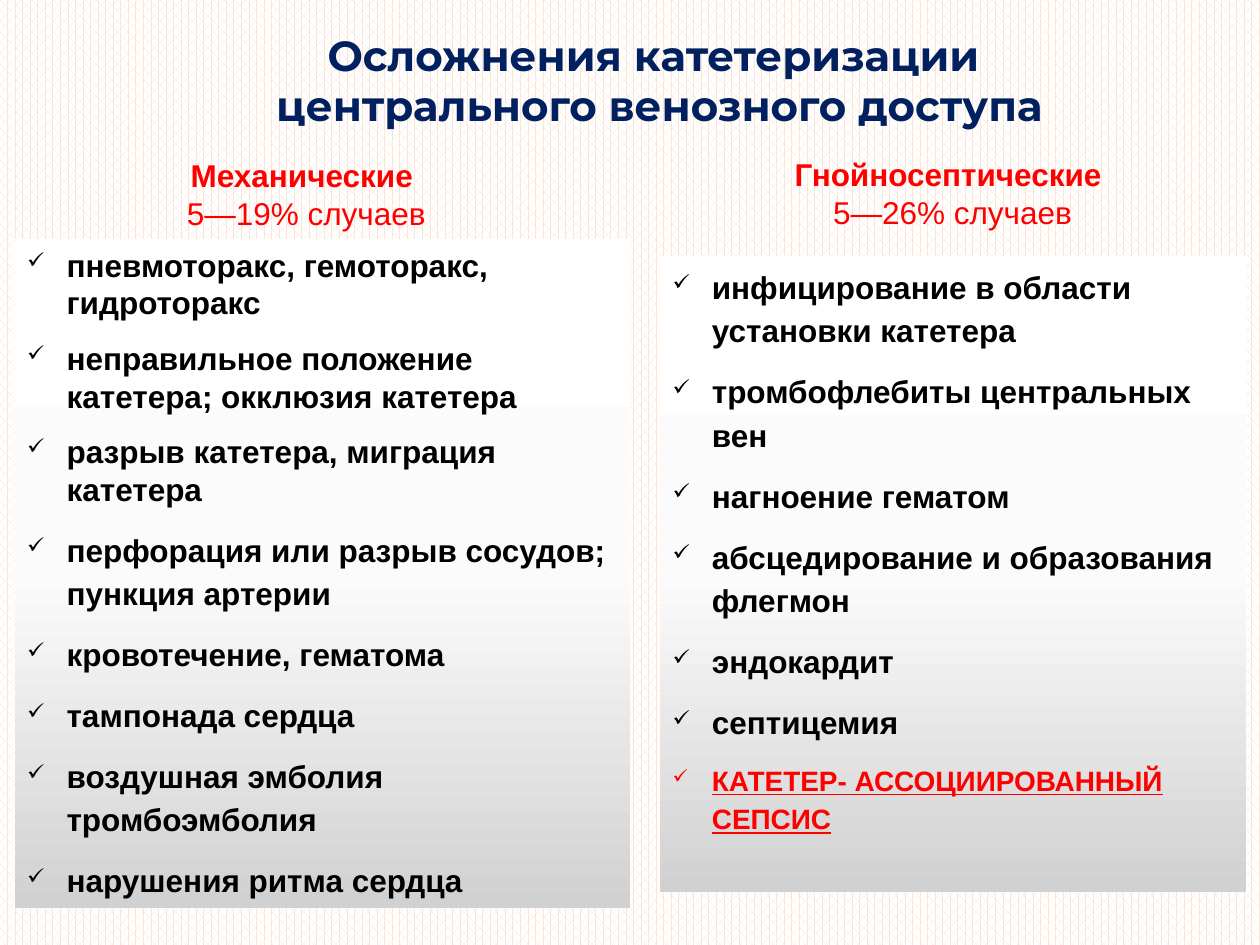
"""Build a slide that compares two groups of central venous catheter complications."""
from dataclasses import dataclass

from lxml.etree import SubElement
from pptx import Presentation
from pptx.dml.color import RGBColor
from pptx.enum.dml import MSO_PATTERN
from pptx.enum.shapes import MSO_SHAPE
from pptx.enum.text import MSO_ANCHOR, MSO_AUTO_SIZE, PP_ALIGN
from pptx.oxml.ns import qn
from pptx.util import Pt


@dataclass(frozen=True)
class Theme:
    navy: str = "002060"
    red: str = "FF0000"
    black: str = "000000"
    white: str = "FFFFFF"
    peach: str = "FBE5D6"
    panel_stops: tuple = ((0, "FFFFFF"), (50, "FBFBFB"), (100, "D1D1D1"))
    title_font: str = "Montserrat"
    body_font: str = "Arial"
    title_size: float = 24
    body_size: float = 18
    accent_size: float = 16
    indent: float = 22.5
    loose: float = 1.15


THEME = Theme()


@dataclass(frozen=True)
class Area:
    left: float
    top: float
    width: float
    height: float

    def lengths(self) -> tuple:
        return tuple(Pt(value) for value in (self.left, self.top, self.width, self.height))


@dataclass(frozen=True)
class Line:
    text: str
    color: str = THEME.black
    size: float = THEME.body_size
    font: str = THEME.body_font
    bold: bool = True
    underline: bool = False
    spacing: float = 1.0


@dataclass(frozen=True)
class Group:
    heading: tuple
    heading_area: Area
    heading_wraps: bool
    items: tuple
    panel_area: Area


def heading(name: str, share: str) -> tuple:
    return Line(name, THEME.red), Line(share, THEME.red, bold=False)


def loose_items(*texts: str) -> tuple:
    return tuple(Line(text, spacing=THEME.loose) for text in texts)


TITLE = tuple(
    Line(text, THEME.navy, THEME.title_size, THEME.title_font)
    for text in ("Осложнения катетеризации ", "центрального венозного доступа")
)
TITLE_AREA = Area(48, 13, 657.5, 65.5)

MECHANICAL = Group(
    heading("Механические ", "5—19% случаев"),
    Area(29.5, 85.5, 291, 51),
    True,
    (
        Line("пневмоторакс, гемоторакс, гидроторакс"),
        Line("неправильное положение катетера; окклюзия катетера"),
        Line("разрыв катетера, миграция катетера"),
    )
    + loose_items(
        "перфорация или разрыв сосудов; пункция артерии",
        "кровотечение, гематома",
        "тампонада сердца",
        "воздушная эмболия тромбоэмболия",
        "нарушения ритма сердца",
    ),
    Area(8.5, 136.8, 351.5, 382.3),
)

SEPTIC = Group(
    heading("Гнойносептические ", "5—26% случаев"),
    Area(445.7, 85, 197.3, 51),
    False,
    loose_items(
        "инфицирование в области установки катетера",
        "тромбофлебиты центральных вен",
        "нагноение гематом",
        "абсцедирование и образования флегмон",
        "эндокардит",
        "септицемия",
    )
    + (
        Line(
            "КАТЕТЕР- АССОЦИИРОВАННЫЙ СЕПСИС",
            THEME.red,
            THEME.accent_size,
            underline=True,
            spacing=THEME.loose,
        ),
    ),
    Area(377.2, 146.2, 334.8, 363.6),
)


def add_check_mark(paragraph) -> None:
    properties = paragraph._p.get_or_add_pPr()
    properties.set("marL", str(Pt(THEME.indent)))
    properties.set("indent", str(-Pt(THEME.indent)))
    SubElement(properties, qn("a:buSzPct"), val="70000")
    SubElement(properties, qn("a:buChar"), char="✓")


def write_lines(shape, lines: tuple, checked: bool = False, wraps: bool = True) -> None:
    frame = shape.text_frame
    frame.word_wrap = wraps
    frame.auto_size = MSO_AUTO_SIZE.SHAPE_TO_FIT_TEXT
    frame.vertical_anchor = MSO_ANCHOR.TOP
    for index, line in enumerate(lines):
        paragraph = frame.add_paragraph() if index else frame.paragraphs[0]
        paragraph.text = line.text
        paragraph.alignment = PP_ALIGN.LEFT if checked else PP_ALIGN.CENTER
        paragraph.line_spacing = line.spacing
        paragraph.space_before = Pt(0)
        paragraph.space_after = Pt(10 if checked else 0)
        if checked:
            add_check_mark(paragraph)
        font = paragraph.font
        font.name = line.font
        font.size = Pt(line.size)
        font.bold = line.bold
        font.underline = line.underline
        font.color.rgb = RGBColor.from_string(line.color)


def fill_panel(panel) -> None:
    panel.fill.gradient()
    gradient = panel._element.spPr.find(qn("a:gradFill"))
    stops = gradient.find(qn("a:gsLst"))
    for stop in list(stops):
        stops.remove(stop)
    for position, color in THEME.panel_stops:
        stop = SubElement(stops, qn("a:gs"), pos=str(position * 1000))
        SubElement(stop, qn("a:srgbClr"), val=color)
    gradient.find(qn("a:lin")).set("ang", "5400000")


def draw_group(page, group: Group) -> None:
    box = page.shapes.add_textbox(*group.heading_area.lengths())
    write_lines(box, group.heading, wraps=group.heading_wraps)
    panel = page.shapes.add_shape(MSO_SHAPE.RECTANGLE, *group.panel_area.lengths())
    panel.shadow.inherit = False
    panel.line.fill.background()
    fill_panel(panel)
    write_lines(panel, group.items, checked=True)


def main() -> None:
    deck = Presentation()
    deck.slide_width, deck.slide_height = Pt(720), Pt(540)
    page = deck.slides.add_slide(deck.slide_layouts[5])
    backdrop = page.background.fill
    backdrop.patterned()
    backdrop.pattern = MSO_PATTERN.PERCENT_60
    backdrop.fore_color.rgb = RGBColor.from_string(THEME.peach)
    backdrop.back_color.rgb = RGBColor.from_string(THEME.white)
    title = page.shapes.title
    title.left, title.top, title.width, title.height = TITLE_AREA.lengths()
    write_lines(title, TITLE)
    for group in (MECHANICAL, SEPTIC):
        draw_group(page, group)
    deck.save("out.pptx")


if __name__ == "__main__":
    main()
